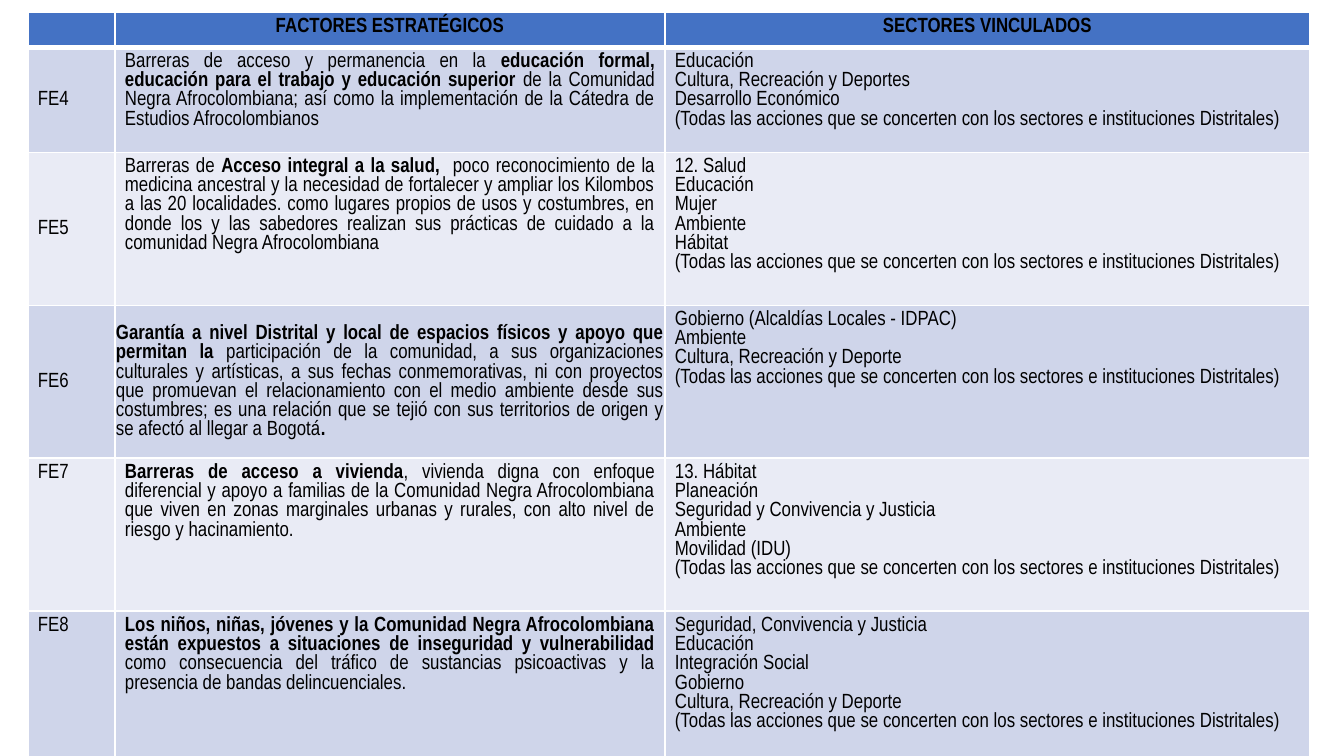
import pptx
import pptx.util
import pptx.dml.color
import pptx.enum.text
import pptx.oxml.ns
import lxml.etree

SCALE = 914400 / 134.4
FONT = "Arial Narrow"
SIZE = 11
COLORS = {
    "header": "4472C4",
    "dark_band": "CFD5EA",
    "light_band": "E9EBF5",
    "border": "FFFFFF",
    "text": "000000",
}
COLUMN_WIDTHS = [87, 550, 645]
ROW_HEIGHTS = [34, 105, 153, 153, 153, 161]
MARGINS = (10, 5, 10, 5)
TIGHT_MARGINS = (1, 1, 1, 0)
ALIGN = pptx.enum.text.PP_ALIGN
ANCHOR = pptx.enum.text.MSO_ANCHOR
ALL_SECTORS = "(Todas las acciones que se concerten con los sectores e instituciones Distritales)"
HEADINGS = ["", "**FACTORES ESTRATÉGICOS**", "**SECTORES VINCULADOS**"]
FACTORS = [
    (
        "FE4",
        "Barreras de acceso y permanencia en la **educación formal, educación para el trabajo "
        "y educación superior **de la Comunidad Negra Afrocolombiana; así como la "
        "implementación de la Cátedra de Estudios Afrocolombianos",
        ["Educación", "Cultura, Recreación y Deportes", "Desarrollo Económico"],
    ),
    (
        "FE5",
        "Barreras de **Acceso integral a la salud, ** poco reconocimiento de la medicina "
        "ancestral y la necesidad de fortalecer y ampliar los Kilombos a las 20 localidades. "
        "como lugares propios de usos y costumbres, en donde los y las sabedores realizan sus "
        "prácticas de cuidado a la comunidad Negra Afrocolombiana",
        ["12. Salud", "Educación", "Mujer", "Ambiente", "Hábitat"],
    ),
    (
        "FE6",
        "**Garantía a nivel Distrital y local de espacios físicos y apoyo que permitan la** "
        "participación de la comunidad, a sus organizaciones culturales y artísticas, a sus "
        "fechas conmemorativas, ni con proyectos que promuevan el relacionamiento con el medio "
        "ambiente desde sus costumbres; es una relación que se tejió con sus territorios de "
        "origen y se afectó al llegar a Bogotá**.**",
        ["Gobierno (Alcaldías Locales - IDPAC)", "Ambiente", "Cultura, Recreación y Deporte"],
    ),
    (
        "FE7",
        "**Barreras de acceso a vivienda**, vivienda digna con enfoque diferencial y apoyo a "
        "familias de la Comunidad Negra Afrocolombiana que viven en zonas marginales urbanas y "
        "rurales, con alto nivel de riesgo y hacinamiento.",
        ["13. Hábitat", "Planeación", "Seguridad y Convivencia y Justicia", "Ambiente",
         "Movilidad (IDU)"],
    ),
    (
        "FE8",
        "**Los niños, niñas, jóvenes y la Comunidad Negra Afrocolombiana están expuestos a "
        "situaciones de inseguridad y vulnerabilidad **como consecuencia del tráfico de "
        "sustancias psicoactivas y la presencia de bandas delincuenciales.",
        ["Seguridad, Convivencia y Justicia", "Educación", "Integración Social", "Gobierno",
         "Cultura, Recreación y Deporte"],
    ),
]


def px(length):
    return pptx.util.Emu(round(length * SCALE))


def rgb(name):
    return pptx.dml.color.RGBColor.from_string(COLORS[name])


def add_element(parent, tag, **attributes):
    return lxml.etree.SubElement(parent, pptx.oxml.ns.qn(tag), **attributes)


def add_borders(cell, bottom):
    properties = cell._tc.get_or_add_tcPr()
    widths = {"a:lnL": 1, "a:lnR": 1, "a:lnT": 1, "a:lnB": bottom}
    for tag, width in widths.items():
        line = add_element(properties, tag, w=str(pptx.util.Pt(width)))
        fill = add_element(line, "a:solidFill")
        add_element(fill, "a:srgbClr", val=COLORS["border"])


def write_paragraph(para, text, align):
    para.alignment = align
    if not text:
        add_element(para._p, "a:endParaRPr", sz=str(SIZE * 100))
    for index, part in enumerate(text.split("**")):
        if part:
            span = para.add_run()
            span.text = part
            span.font.name = FONT
            span.font.size = pptx.util.Pt(SIZE)
            span.font.bold = index % 2 == 1
            span.font.color.rgb = rgb("text")


def fill_cell(cell, lines, fill, align=ALIGN.LEFT, anchor=ANCHOR.TOP, margins=MARGINS, bottom=1):
    add_borders(cell, bottom)
    cell.fill.solid()
    cell.fill.fore_color.rgb = rgb(fill)
    cell.vertical_anchor = anchor
    cell.margin_left, cell.margin_top, cell.margin_right, cell.margin_bottom = map(px, margins)
    frame = cell.text_frame
    for index, line in enumerate(lines):
        para = frame.add_paragraph() if index else frame.paragraphs[0]
        write_paragraph(para, line, align)


def add_factor_table(page):
    frame = page.shapes.add_table(
        len(ROW_HEIGHTS), len(COLUMN_WIDTHS),
        px(28), px(12), px(sum(COLUMN_WIDTHS)), px(sum(ROW_HEIGHTS)),
    )
    table = frame.table
    for column, width in zip(table.columns, COLUMN_WIDTHS):
        column.width = px(width)
    for row, height in zip(table.rows, ROW_HEIGHTS):
        row.height = px(height)
    return table


def fill_header(table):
    for column, heading in enumerate(HEADINGS):
        fill_cell(table.cell(0, column), [heading], "header", ALIGN.CENTER, bottom=3)


def fill_factor(table, row, code, factor, sectors):
    band = "dark_band" if row % 2 else "light_band"
    code_anchor = ANCHOR.MIDDLE if code in ("FE4", "FE5", "FE6") else ANCHOR.TOP
    tight = code == "FE6"
    fill_cell(table.cell(row, 0), [code], band, anchor=code_anchor)
    fill_cell(
        table.cell(row, 1), [factor], band, ALIGN.JUSTIFY,
        ANCHOR.MIDDLE if tight else ANCHOR.TOP,
        TIGHT_MARGINS if tight else MARGINS,
    )
    fill_cell(table.cell(row, 2), sectors + [ALL_SECTORS], band)


def main():
    deck = pptx.Presentation()
    deck.slide_width, deck.slide_height = px(1344), px(756)
    page = deck.slides.add_slide(deck.slide_layouts[6])
    table = add_factor_table(page)
    fill_header(table)
    for row, factor in enumerate(FACTORS, start=1):
        fill_factor(table, row, *factor)
    deck.save("out.pptx")


if __name__ == "__main__":
    main()
